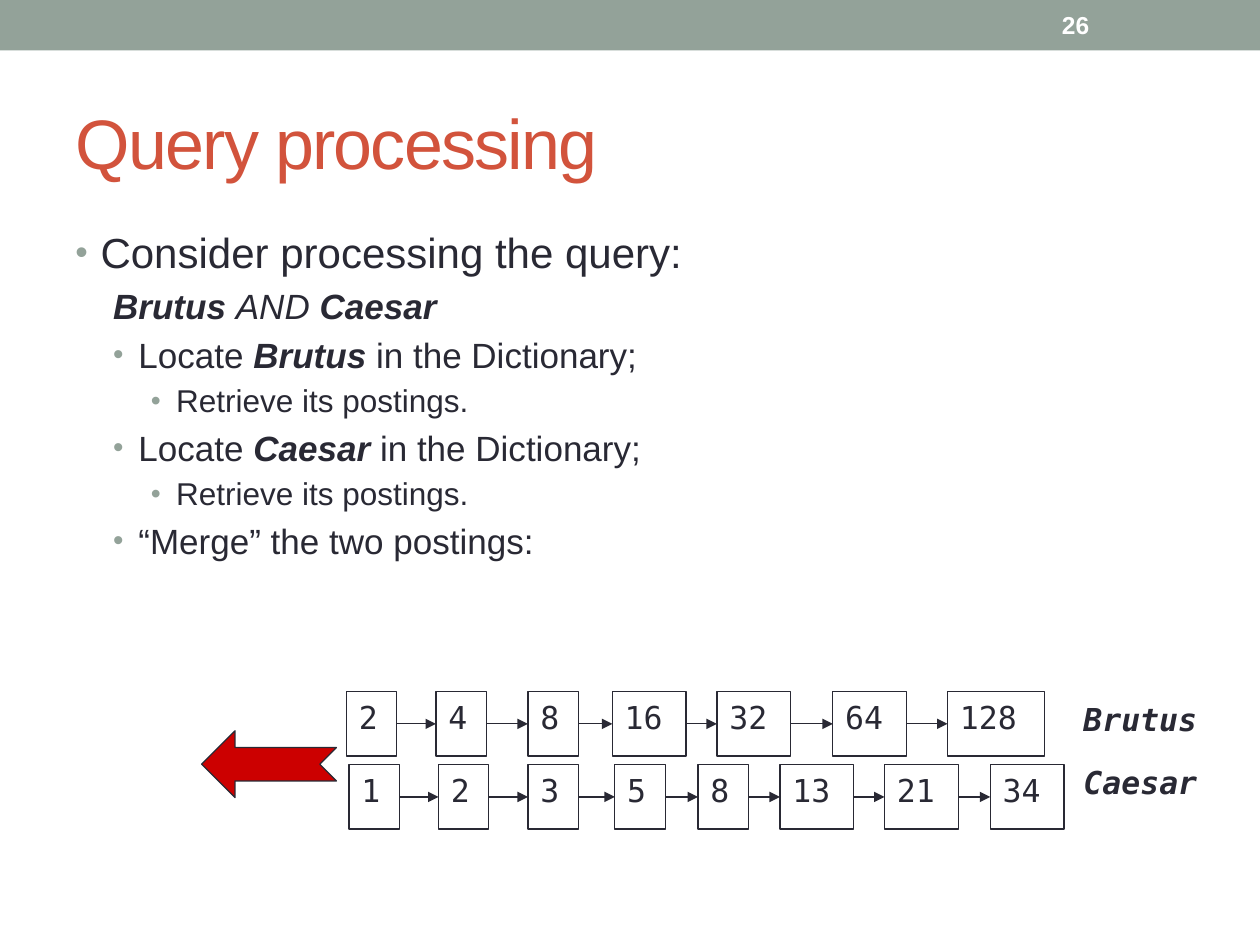
from lxml import etree
from pptx import Presentation
from pptx.dml.color import RGBColor
from pptx.enum.shapes import MSO_CONNECTOR, MSO_SHAPE
from pptx.enum.text import MSO_ANCHOR, MSO_AUTO_SIZE, PP_ALIGN
from pptx.oxml.ns import qn
from pptx.util import Inches, Pt

RECTANGLE = MSO_SHAPE.RECTANGLE
NOTCHED_ARROW = MSO_SHAPE.NOTCHED_RIGHT_ARROW
STRAIGHT = MSO_CONNECTOR.STRAIGHT
TOP, MIDDLE = MSO_ANCHOR.TOP, MSO_ANCHOR.MIDDLE
LEFT = PP_ALIGN.LEFT
NO_FIT = MSO_AUTO_SIZE.NONE

INK = RGBColor(0x29, 0x29, 0x34)
SAGE = RGBColor(0x93, 0xA2, 0x99)
BRICK = RGBColor(0xD2, 0x53, 0x3C)
RED = RGBColor(0xCC, 0x00, 0x00)
WHITE = RGBColor(0xFF, 0xFF, 0xFF)

COLUMNS, ROWS = 100, 75
RIGHT_SIDE, LEFT_SIDE = 3, 1
BOX_HEIGHT = 5.1

PLAIN, ITALIC, STRONG = (False, False), (False, True), (True, True)
OUTLINE = [
    (0, True, [("Consider processing the query:", PLAIN)]),
    (1, False, [("Brutus ", STRONG), ("AND ", ITALIC), ("Caesar", STRONG)]),
    (1, True, [("Locate ", PLAIN), ("Brutus", STRONG), (" in the Dictionary;", PLAIN)]),
    (2, True, [("Retrieve its postings.", PLAIN)]),
    (1, True, [("Locate ", PLAIN), ("Caesar", STRONG), (" in the Dictionary;", PLAIN)]),
    (2, True, [("Retrieve its postings.", PLAIN)]),
    (1, True, [("“Merge” the two postings:", PLAIN)]),
]
LEVEL_SIZES = [24, 20, 18]
LEVEL_MARGINS = [0.2, 0.5, 0.8]
BULLET_PERCENTS = [85, 85, 90]

BRUTUS_POSTINGS = [("2", 27.5), ("4", 34.6), ("8", 41.9), ("16", 48.6),
                   ("32", 56.9), ("64", 66.1), ("128", 75.2)]
CAESAR_POSTINGS = [("1", 27.7), ("2", 34.8), ("3", 41.9), ("5", 48.8),
                   ("8", 55.4), ("13", 61.9), ("21", 70.2), ("34", 78.6)]


def add_xml(parent, tag, **attributes):
    return etree.SubElement(parent, qn(tag), attributes)


class SlideBuilder:
    sans = "Arial"
    mono = "DejaVu Sans Mono"
    line_width = Pt(0.75)

    def __init__(self, presentation):
        self.column = presentation.slide_width / COLUMNS
        self.row = presentation.slide_height / ROWS
        self.slide = presentation.slides.add_slide(presentation.slide_layouts[5])

    def area(self, left, top, width, height):
        return (round(left * self.column), round(top * self.row),
                round(width * self.column), round(height * self.row))

    def style_run(self, run, size, color, font, bold=False, italic=False):
        run.font.size = Pt(size)
        run.font.name = font
        run.font.bold = bold
        run.font.italic = italic
        run.font.color.rgb = color

    def put_text(self, shape, text, size, color, font, anchor=TOP, bold=False, italic=False):
        frame = shape.text_frame
        frame.text = text
        frame.word_wrap = True
        frame.auto_size = NO_FIT
        frame.vertical_anchor = anchor
        paragraph = frame.paragraphs[0]
        paragraph.alignment = LEFT
        self.style_run(paragraph.runs[0], size, color, font, bold, italic)

    def title(self, text, area):
        title = self.slide.shapes.title
        title.left, title.top, title.width, title.height = self.area(*area)
        self.put_text(title, text, 40, BRICK, self.sans, MIDDLE)
        run = title.text_frame.paragraphs[0].runs[0]
        run.font._element.set("spc", "-100")

    def label(self, text, area, size, color, font, anchor=TOP, italic=False):
        box = self.slide.shapes.add_textbox(*self.area(*area))
        self.put_text(box, text, size, color, font, anchor, True, italic)

    def shape(self, kind, area, fill=None, line=None):
        shape = self.slide.shapes.add_shape(kind, *self.area(*area))
        shape.shadow.inherit = False
        if fill is None:
            shape.fill.background()
        else:
            shape.fill.solid()
            shape.fill.fore_color.rgb = fill
        if line is None:
            shape.line.fill.background()
        else:
            shape.line.color.rgb = line
            shape.line.width = self.line_width
        return shape

    def outline(self, items, area):
        frame = self.slide.shapes.add_textbox(*self.area(*area)).text_frame
        frame.word_wrap = True
        for index, (level, bulleted, parts) in enumerate(items):
            paragraph = frame.add_paragraph() if index else frame.paragraphs[0]
            paragraph.level = level
            for text, (bold, italic) in parts:
                run = paragraph.add_run()
                run.text = text
                self.style_run(run, LEVEL_SIZES[level], INK, self.sans, bold, italic)
            self.indent(paragraph, level, bulleted)

    def indent(self, paragraph, level, bulleted):
        properties = paragraph._p.get_or_add_pPr()
        properties.set("marL", str(Inches(LEVEL_MARGINS[level])))
        properties.set("indent", str(-Inches(0.2)))
        add_xml(add_xml(properties, "a:spcBef"), "a:spcPct", val="20000")
        if bulleted:
            add_xml(add_xml(properties, "a:buClr"), "a:srgbClr", val=str(SAGE))
            add_xml(properties, "a:buSzPct", val=str(BULLET_PERCENTS[level] * 1000))
            add_xml(properties, "a:buFont", typeface=self.sans)
            add_xml(properties, "a:buChar", char="•")

    def arrow(self, source, target):
        link = self.slide.shapes.add_connector(STRAIGHT, 0, 0, 0, 0)
        link.begin_connect(source, RIGHT_SIDE)
        link.end_connect(target, LEFT_SIDE)
        link.line.color.rgb = INK
        link.line.width = self.line_width
        add_xml(link.line._get_or_add_ln(), "a:tailEnd", type="triangle")
        add_xml(link._element.spPr, "a:effectLst")

    def postings(self, entries, top):
        previous = None
        for document, left in entries:
            width = 2.15 + 1.85 * len(document)
            box = self.shape(RECTANGLE, (left, top, width, BOX_HEIGHT), line=INK)
            self.put_text(box, document, 18, INK, self.mono)
            if previous is not None:
                self.arrow(previous, box)
            previous = box


def main():
    presentation = Presentation()
    presentation.slide_width = Inches(10)
    presentation.slide_height = Inches(7.5)

    builder = SlideBuilder(presentation)
    builder.shape(RECTANGLE, (0, 0, COLUMNS, 4), fill=SAGE)
    builder.title("Query processing", (5, 5.8, 90, 10.8))
    builder.outline(OUTLINE, (5, 17.5, 90, 53.3))
    builder.postings(BRUTUS_POSTINGS, 54.9)
    builder.postings(CAESAR_POSTINGS, 60.7)
    builder.label("Brutus", (85, 55.1, 11.6, 5), 18, INK, builder.mono, italic=True)
    builder.label("Caesar", (85, 60.1, 12.8, 5), 18, INK, builder.mono, italic=True)
    merge_arrow = builder.shape(NOTCHED_ARROW, (16, 58, 10.7, 5.3), RED, INK)
    merge_arrow.rotation = 180
    builder.label("26", (83.3, 0.2, 11.7, 3.6), 14, WHITE, builder.sans, MIDDLE)

    presentation.save("out.pptx")


if __name__ == "__main__":
    main()
